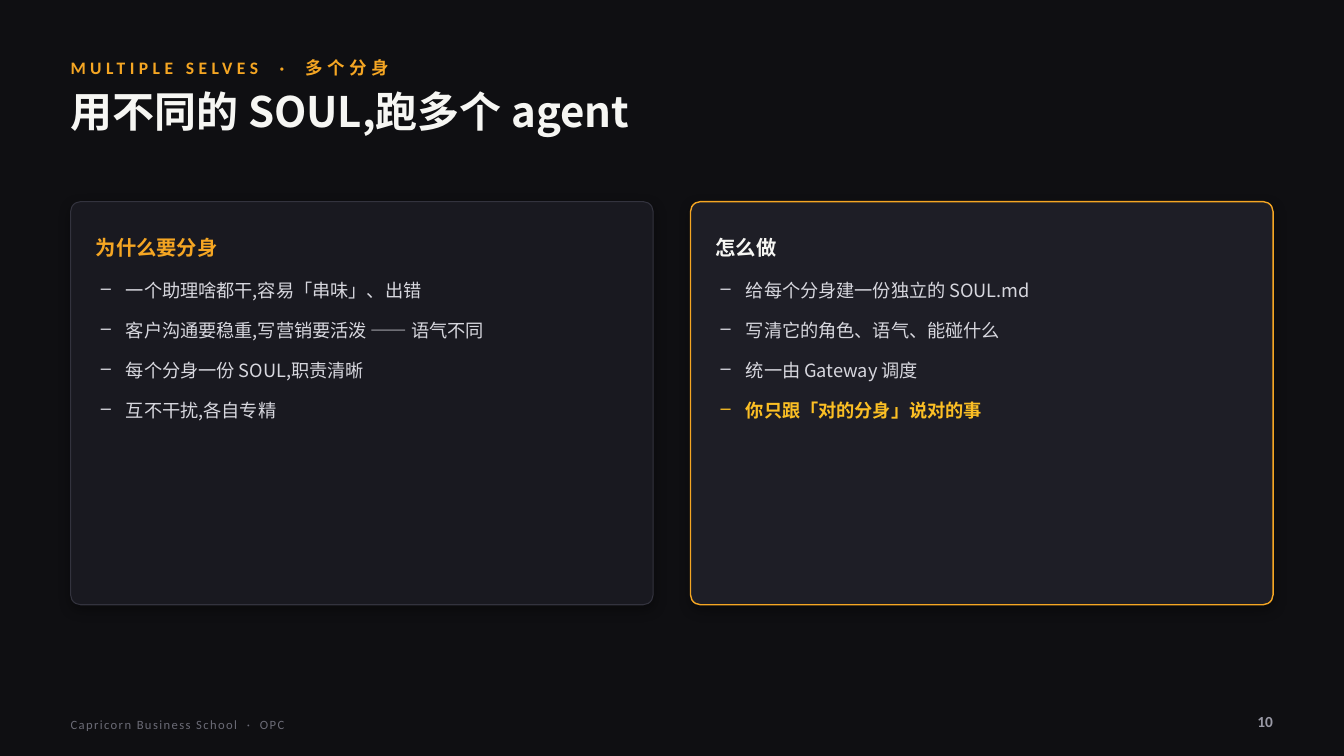
from lxml.etree import SubElement
from pptx import Presentation
from pptx.dml.color import RGBColor
from pptx.enum.shapes import MSO_SHAPE
from pptx.enum.text import MSO_ANCHOR, PP_ALIGN
from pptx.oxml import parse_xml
from pptx.oxml.ns import nsdecls, qn
from pptx.util import Pt

SANS, CJK = "Calibri", "Noto Sans CJK SC"
AMBER, WHITE, GREY = "F5A623", "F6F6F3", "D7D7DE"
colour = RGBColor.from_string


def add_frame(left, top, width, height, anchor=MSO_ANCHOR.MIDDLE):
    frame = slide.shapes.add_textbox(Pt(left), Pt(top), Pt(width), Pt(height)).text_frame
    frame.word_wrap = True
    frame.vertical_anchor = anchor
    frame.margin_left = frame.margin_top = frame.margin_right = frame.margin_bottom = 0
    return frame


def add_run(paragraph, text, size, font, ink, bold=False, tracking=0):
    run = paragraph.add_run()
    run.text = text
    run.font.size = Pt(size)
    run.font.name = font
    run.font.bold = bold
    run.font.color.rgb = colour(ink)
    properties = run.font._element
    SubElement(properties, qn("a:ea")).set("typeface", CJK)
    if tracking:
        properties.set("spc", str(round(tracking * 100)))


prs = Presentation()
prs.slide_width, prs.slide_height = Pt(960), Pt(540)
slide = prs.slides.add_slide(prs.slide_layouts[6])
slide.background.fill.solid()
slide.background.fill.fore_color.rgb = colour("0F0F12")

MARGIN, CONTENT_WIDTH = 50.4, 859

# Eyebrow and title; wide tracking on the spaces sets the dot apart
eyebrow = add_frame(MARGIN, 37.44, CONTENT_WIDTH, 21.6).paragraphs[0]
for text, tracking in [("MULTIPLE SELVES", 3.2), (" ", 9.2), ("·", 3.2),
                       (" ", 9.2), ("多个分身", 3.2)]:
    add_run(eyebrow, text, 12.5, SANS, AMBER, True, tracking)

title = add_frame(MARGIN, 61.2, CONTENT_WIDTH, 64.8, MSO_ANCHOR.TOP).paragraphs[0]
add_run(title, "用不同的 SOUL,跑多个 agent", 30, CJK, WHITE, True)

# Two cards: heading, heading colour, fill, border, border width, points
CARD_TOP, CARD_WIDTH, CARD_HEIGHT, CARD_STEP = 144, 416.16, 288, 442.8
cards = [
    ("为什么要分身", AMBER, "191920", "33333E", 0.75, [
        ("一个助理啥都干,容易「串味」、出错", GREY, False),
        ("客户沟通要稳重,写营销要活泼 —— 语气不同", GREY, False),
        ("每个分身一份 SOUL,职责清晰", GREY, False),
        ("互不干扰,各自专精", GREY, False),
    ]),
    ("怎么做", WHITE, "1E1E26", AMBER, 1, [
        ("给每个分身建一份独立的 SOUL.md", GREY, False),
        ("写清它的角色、语气、能碰什么", GREY, False),
        ("统一由 Gateway 调度", GREY, False),
        ("你只跟「对的分身」说对的事", "FBBF24", True),
    ]),
]
for index, (heading, heading_ink, fill, border, border_width, points) in enumerate(cards):
    left = MARGIN + index * CARD_STEP
    card = slide.shapes.add_shape(MSO_SHAPE.ROUNDED_RECTANGLE, Pt(left), Pt(CARD_TOP),
                                  Pt(CARD_WIDTH), Pt(CARD_HEIGHT))
    card.adjustments[0] = 0.025
    card.fill.solid()
    card.fill.fore_color.rgb = colour(fill)
    card.line.color.rgb = colour(border)
    card.line.width = Pt(border_width)

    # Soft shadow straight below the card
    card.shadow.inherit = False
    card._element.spPr.find(qn("a:effectLst")).append(parse_xml(
        f'<a:outerShdw {nsdecls("a")} blurRad="{Pt(9)}" dist="{Pt(3)}" dir="5400000" '
        'algn="ctr" rotWithShape="0"><a:srgbClr val="000000"><a:alpha val="34000"/>'
        '</a:srgbClr></a:outerShdw>'))

    card_heading = add_frame(left + 18, CARD_TOP + 18, 360, 28.8).paragraphs[0]
    add_run(card_heading, heading, 14.5, CJK, heading_ink, True)

    # Dash list
    point_list = add_frame(left + 21.6, CARD_TOP + 54, 374.4, 223.2, MSO_ANCHOR.TOP)
    for number, (text, ink, bold) in enumerate(points):
        point = point_list.paragraphs[0] if number == 0 else point_list.add_paragraph()
        indents = point._p.get_or_add_pPr()
        indents.set("marL", str(Pt(18)))
        indents.set("indent", str(-Pt(18)))
        SubElement(indents, qn("a:buChar")).set("char", "–")
        point.line_spacing = 1.12
        point.space_after = Pt(11)
        add_run(point, text, 13, CJK, ink, bold)

# Footer and page number
footer = add_frame(MARGIN, 506.88, 504, 21.6).paragraphs[0]
for text, tracking in [("Capricorn Business School", 1), (" ", 4), ("·", 1),
                       (" ", 4), ("OPC", 1)]:
    add_run(footer, text, 9, SANS, "6B6B76", tracking=tracking)

page_number = add_frame(851.76, 504, 57.6, 23.04).paragraphs[0]
page_number.alignment = PP_ALIGN.RIGHT
add_run(page_number, "10", 11, SANS, "9A9AA6", True)

prs.save("out.pptx")
